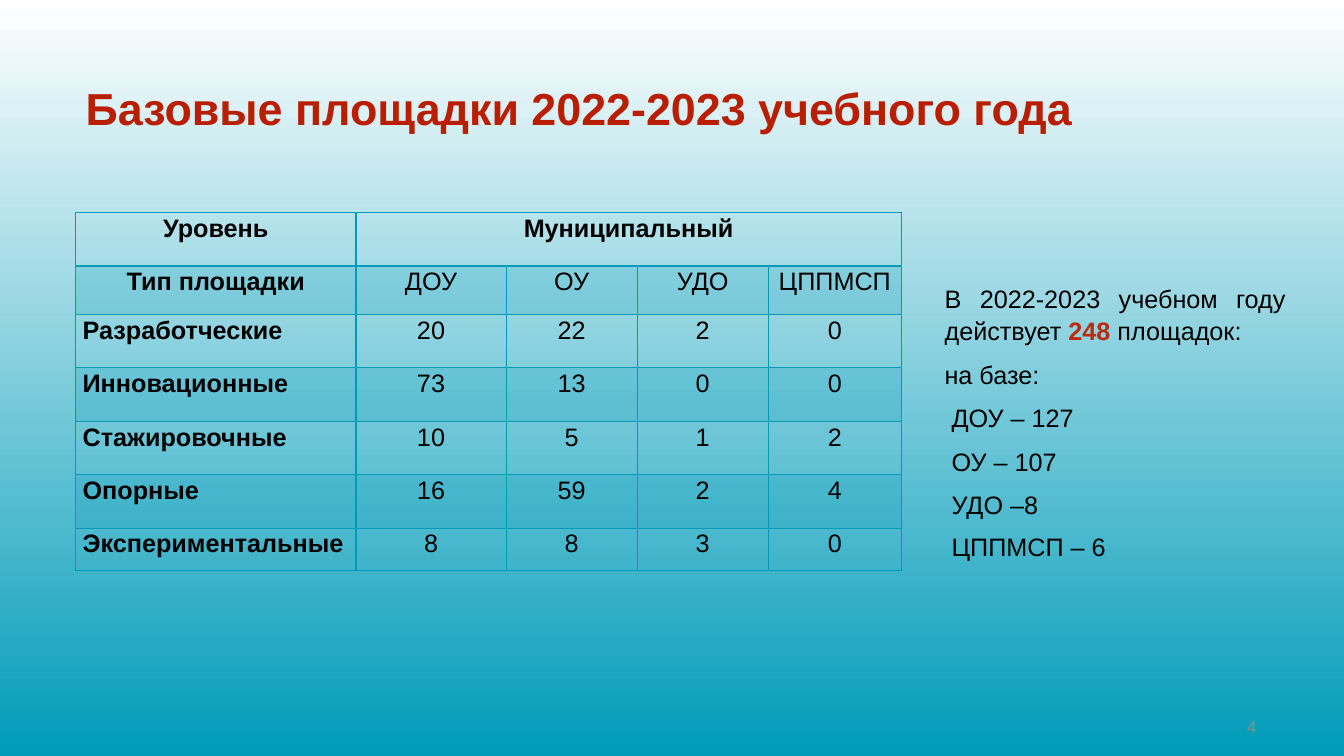
from dataclasses import dataclass

from lxml import etree
from pptx import Presentation
from pptx import util as u
from pptx.dml.color import RGBColor
from pptx.enum import text
from pptx.oxml import ns


@dataclass(frozen=True)
class Theme:
    font: str = "Arial"
    ink: str = "000000"
    title: str = "B91E00"
    accent: str = "BD290C"
    teal: str = "009BB9"
    white: str = "FFFFFF"
    muted: str = "8C8C8C"
    title_size: int = 32
    body_size: int = 18
    number_size: int = 12
    leading: float = 1.07
    band_alpha: int = 20


@dataclass(frozen=True)
class Box:
    left: float
    top: float
    width: float
    height: float

    def lengths(self) -> list:
        return [u.Inches(n) for n in (self.left, self.top, self.width, self.height)]


@dataclass(frozen=True)
class PlatformRow:
    label: str
    values: tuple[str, ...]
    height: float = 0.53


THEME = Theme()
LEFT, CENTER = text.PP_ALIGN.LEFT, text.PP_ALIGN.CENTER
COLUMN_WIDTHS = (2.78, 1.49, 1.3, 1.3, 1.32)
ROWS = (
    PlatformRow("Уровень", ("Муниципальный", "", "", "")),
    PlatformRow("Тип площадки", ("ДОУ", "ОУ", "УДО", "ЦППМСП"), 0.48),
    PlatformRow("Разработческие", ("20", "22", "2", "0")),
    PlatformRow("Инновационные", ("73", "13", "0", "0")),
    PlatformRow("Стажировочные", ("10", "5", "1", "2")),
    PlatformRow("Опорные", ("16", "59", "2", "4")),
    PlatformRow("Экспериментальные", ("8", "8", "3", "0"), 0.42),
)
SUMMARY = (
    ("В 2022-2023 учебном году действует ", "248", " площадок: "),
    ("на базе:",),
    (" ДОУ – 127 ",),
    (" ОУ – 107 ",),
    (" УДО –8",),
    (" ЦППМСП – 6",),
)


def format_run(run, size: int, color: str, bold: bool = False) -> None:
    run.font.name = THEME.font
    run.font.size = u.Pt(size)
    run.font.bold = bold
    run.font.color.rgb = RGBColor.from_string(color)


def paint_background(slide) -> None:
    fill = slide.background.fill
    fill.gradient()
    fill.gradient_angle = 270
    for stop, position, color in zip(fill.gradient_stops, (0, 1), (THEME.white, THEME.teal)):
        stop.position = position
        stop.color.rgb = RGBColor.from_string(color)


def add_title(slide, box: Box) -> None:
    title = slide.shapes.title
    title.left, title.top, title.width, title.height = box.lengths()
    frame = title.text_frame
    frame.text = "Базовые площадки 2022-2023 учебного года"
    frame.word_wrap = True
    frame.auto_size = text.MSO_AUTO_SIZE.NONE
    frame.vertical_anchor = text.MSO_ANCHOR.MIDDLE
    frame.margin_bottom = u.Inches(0.5)
    paragraph = frame.paragraphs[0]
    paragraph.alignment = LEFT
    paragraph.line_spacing = 0.9
    format_run(paragraph.runs[0], THEME.title_size, THEME.title, True)


def add_borders(cell, bottom_width: float) -> None:
    properties = cell._tc.get_or_add_tcPr()
    widths = {"L": 1, "R": 1, "T": 1, "B": bottom_width}
    for index, (side, width) in enumerate(widths.items()):
        line = etree.Element(ns.qn(f"a:ln{side}"), w=str(u.Pt(width)))
        solid = etree.SubElement(line, ns.qn("a:solidFill"))
        etree.SubElement(solid, ns.qn("a:srgbClr"), val=THEME.teal)
        properties.insert(index, line)


def fill_cell(cell, banded: bool) -> None:
    if not banded:
        cell.fill.background()
        return
    cell.fill.solid()
    cell.fill.fore_color.rgb = RGBColor.from_string(THEME.teal)
    color = cell._tc.tcPr.find(".//" + ns.qn("a:srgbClr"))
    etree.SubElement(color, ns.qn("a:alpha"), val=str(THEME.band_alpha * 1000))


def write_cell(cell, value: str, bold: bool, alignment) -> None:
    cell.margin_left = cell.margin_right = u.Inches(0.07)
    cell.margin_top = cell.margin_bottom = 0
    cell.text = value
    paragraph = cell.text_frame.paragraphs[0]
    paragraph.alignment = alignment
    paragraph.line_spacing = THEME.leading
    for run in paragraph.runs:
        format_run(run, THEME.body_size, THEME.ink, bold)


def add_platform_table(slide, box: Box) -> None:
    table = slide.shapes.add_table(len(ROWS), len(COLUMN_WIDTHS), *box.lengths()).table
    table.first_row = table.horz_banding = False
    for column, width in zip(table.columns, COLUMN_WIDTHS):
        column.width = u.Inches(width)
    for row_index, row in enumerate(ROWS):
        table.rows[row_index].height = u.Inches(row.height)
        for column_index, value in enumerate((row.label, *row.values)):
            cell = table.cell(row_index, column_index)
            is_label = column_index == 0
            alignment = LEFT if is_label and row_index > 1 else CENTER
            write_cell(cell, value, is_label or row_index == 0, alignment)
            fill_cell(cell, row_index % 2 == 1)
            add_borders(cell, 2 if row_index == 0 else 1)
    table.cell(0, 1).merge(table.cell(0, len(COLUMN_WIDTHS) - 1))


def add_summary(slide, box: Box) -> None:
    frame = slide.shapes.add_textbox(*box.lengths()).text_frame
    frame.word_wrap = True
    frame.auto_size = text.MSO_AUTO_SIZE.SHAPE_TO_FIT_TEXT
    for index, parts in enumerate(SUMMARY):
        paragraph = frame.add_paragraph() if index else frame.paragraphs[0]
        if index < len(SUMMARY) - 1:
            paragraph.alignment = text.PP_ALIGN.JUSTIFY
            paragraph.line_spacing = THEME.leading
            paragraph.space_after = u.Pt(8)
        for part in parts:
            run = paragraph.add_run()
            run.text = part
            is_total = part == "248"
            format_run(run, THEME.body_size, THEME.accent if is_total else THEME.ink, is_total)


def add_slide_number(slide, box: Box) -> None:
    frame = slide.shapes.add_textbox(*box.lengths()).text_frame
    frame.word_wrap = True
    frame.vertical_anchor = text.MSO_ANCHOR.MIDDLE
    frame.margin_left = frame.margin_right = frame.margin_top = frame.margin_bottom = 0
    frame.text = "4"
    format_run(frame.paragraphs[0].runs[0], THEME.number_size, THEME.muted)


def main() -> None:
    presentation = Presentation()
    presentation.slide_width = u.Inches(13.33)
    presentation.slide_height = u.Inches(7.5)
    slide = presentation.slides.add_slide(presentation.slide_layouts.get_by_name("Title Only"))
    paint_background(slide)
    add_title(slide, Box(0.75, 0.6, 11.95, 1.45))
    add_summary(slide, Box(9.27, 2.74, 3.58, 2.91))
    add_platform_table(slide, Box(0.75, 2.11, 8.18, 3.54))
    add_slide_number(slide, Box(12.37, 6.93, 0.97, 0.57))
    presentation.save("out.pptx")


if __name__ == "__main__":
    main()
